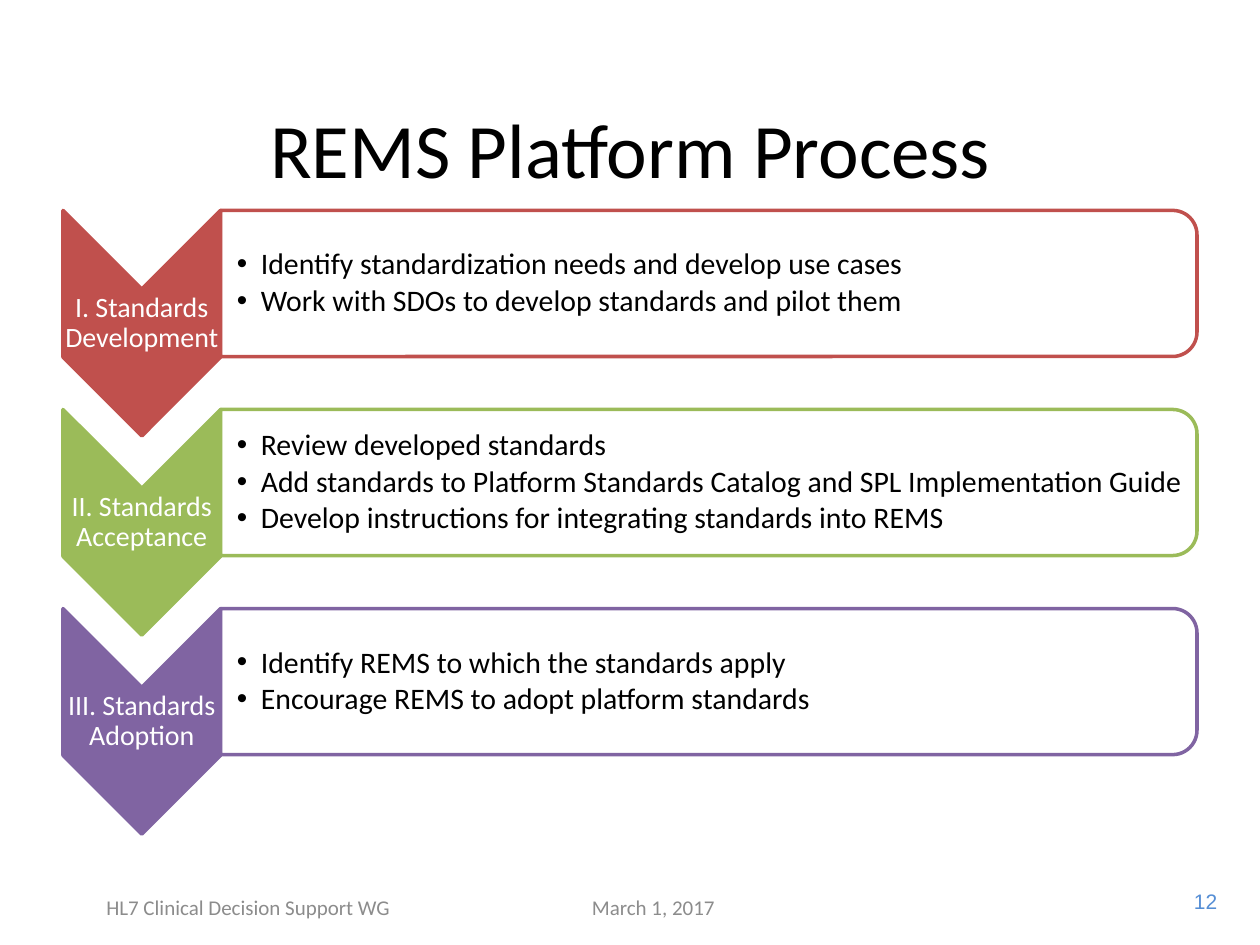
from dataclasses import dataclass

from lxml import etree
from pptx import Presentation, util as u
from pptx.dml.color import RGBColor
from pptx.enum import shapes, text
from pptx.oxml import ns

COLUMNS, ROWS = 100, 75


@dataclass(frozen=True)
class Theme:
    font: str = "Calibri"
    number_font: str = "Arial"
    black: str = "000000"
    white: str = "FFFFFF"
    grey: str = "8C8C8C"
    blue: str = "558ED5"
    title_size: int = 44
    bullet_size: int = 17
    label_size: int = 16
    footer_size: int = 12
    line_width: int = 2


STAGES = [
    ("I. Standards Development", "C0504D", [
        "Identify standardization needs and develop use cases",
        "Work with SDOs to develop standards and pilot them",
    ]),
    ("II. Standards Acceptance", "9BBB59", [
        "Review developed standards",
        "Add standards to Platform Standards Catalog and SPL Implementation Guide",
        "Develop instructions for integrating standards into REMS",
    ]),
    ("III. Standards Adoption", "8064A2", [
        "Identify REMS to which the standards apply",
        "Encourage REMS to adopt platform standards",
    ]),
]


class SlideBuilder:
    def __init__(self, presentation, theme):
        self.theme = theme
        self.column = presentation.slide_width / COLUMNS
        self.row = presentation.slide_height / ROWS
        self.slide = presentation.slides.add_slide(presentation.slide_layouts[6])

    def place(self, left, top, width, height):
        """Turn grid columns and rows into slide lengths."""
        return (int(left * self.column), int(top * self.row),
                int(width * self.column), int(height * self.row))

    def turned_shape(self, parent, kind, box, fill, line):
        """Add a shape turned by 90 degrees that covers the given box."""
        left, top, width, height = self.place(*box)
        shape = parent.shapes.add_shape(
            kind, left + (width - height) // 2, top + (height - width) // 2,
            height, width)
        shape.rotation = 90
        shape.shadow.inherit = False
        shape.fill.solid()
        shape.fill.fore_color.rgb = RGBColor.from_string(fill)
        shape.line.color.rgb = RGBColor.from_string(line)
        shape.line.width = u.Pt(self.theme.line_width)
        return shape

    def text_box(self, parent, box, lines, size, color, font=None,
                 align=text.PP_ALIGN.CENTER, anchor=text.MSO_ANCHOR.MIDDLE,
                 insets=None, spacing=None, bullets=False, wrap=True):
        frame = parent.shapes.add_textbox(*self.place(*box)).text_frame
        frame.word_wrap = wrap
        frame.vertical_anchor = anchor
        if insets:
            (frame.margin_left, frame.margin_top,
             frame.margin_right, frame.margin_bottom) = map(u.Inches, insets)
        frame.text = "\n".join(lines)
        for paragraph in frame.paragraphs:
            paragraph.alignment = align
            if spacing:
                paragraph.line_spacing, after = spacing
                paragraph.space_after = u.Pt(after * size)
            if bullets:
                self.bullet(paragraph)
            for run in paragraph.runs:
                run.font.size = u.Pt(size)
                run.font.name = font or self.theme.font
                run.font.color.rgb = RGBColor.from_string(color)

    def bullet(self, paragraph):
        paragraph.level = 1
        properties = paragraph._p.get_or_add_pPr()
        indent = u.Inches(0.19)
        properties.set("marL", str(indent))
        properties.set("indent", str(-indent))
        etree.SubElement(properties, ns.qn("a:buFont"), typeface="Arial")
        etree.SubElement(properties, ns.qn("a:buChar"), char="•")

    def stage(self, parent, top, label, color, points):
        """Add a downward chevron with its label and a panel of bullets."""
        theme = self.theme
        left, width, height, panel_height = 5, 12.5, 17.9, 11.6
        panel_left = left + width
        self.turned_shape(parent, shapes.MSO_SHAPE.CHEVRON,
                          (left, top, width, height), color, color)
        self.text_box(parent, (left, top + width / 2, width, height - width),
                      [label], theme.label_size, theme.white,
                      insets=(0.01,) * 4, spacing=(0.9, 0.35))
        panel = self.turned_shape(
            parent, shapes.MSO_SHAPE.ROUND_2_SAME_RECTANGLE,
            (panel_left, top, 77.5, panel_height), theme.white, color)
        fill = panel.fill._xPr.find(ns.qn("a:solidFill"))
        etree.SubElement(fill[0], ns.qn("a:alpha"), val="90000")
        self.text_box(parent, (panel_left, top + 0.55, 76.9, panel_height - 1.1),
                      points, theme.bullet_size, theme.black,
                      align=text.PP_ALIGN.LEFT, insets=(0.13, 0.01, 0.01, 0.01),
                      spacing=(0.9, 0.15), bullets=True)


def main():
    presentation = Presentation()
    presentation.slide_width, presentation.slide_height = u.Inches(10), u.Inches(7.5)
    theme = Theme()
    builder = SlideBuilder(presentation, theme)
    slide = builder.slide

    builder.text_box(slide, (93.5, 70, 4.1, 3), ["12"], theme.footer_size,
                     theme.blue, font=theme.number_font,
                     align=text.PP_ALIGN.RIGHT, anchor=text.MSO_ANCHOR.TOP,
                     wrap=False)
    builder.text_box(slide, (3.5, 6.7, 93.1, 10.1), ["REMS Platform Process"],
                     theme.title_size, theme.black)

    process = slide.shapes.add_group_shape()
    first_top, pitch = 16.7, 15.8
    for index, stage in enumerate(STAGES):
        builder.stage(process, first_top + index * pitch, *stage)

    for left, width, line in [(40.2, 23.3, "March 1, 2017"),
                              (2.7, 34, "HL7 Clinical Decision Support WG")]:
        builder.text_box(slide, (left, 70, width, 4), [line],
                         theme.footer_size, theme.grey)
    presentation.save("out.pptx")


if __name__ == "__main__":
    main()
